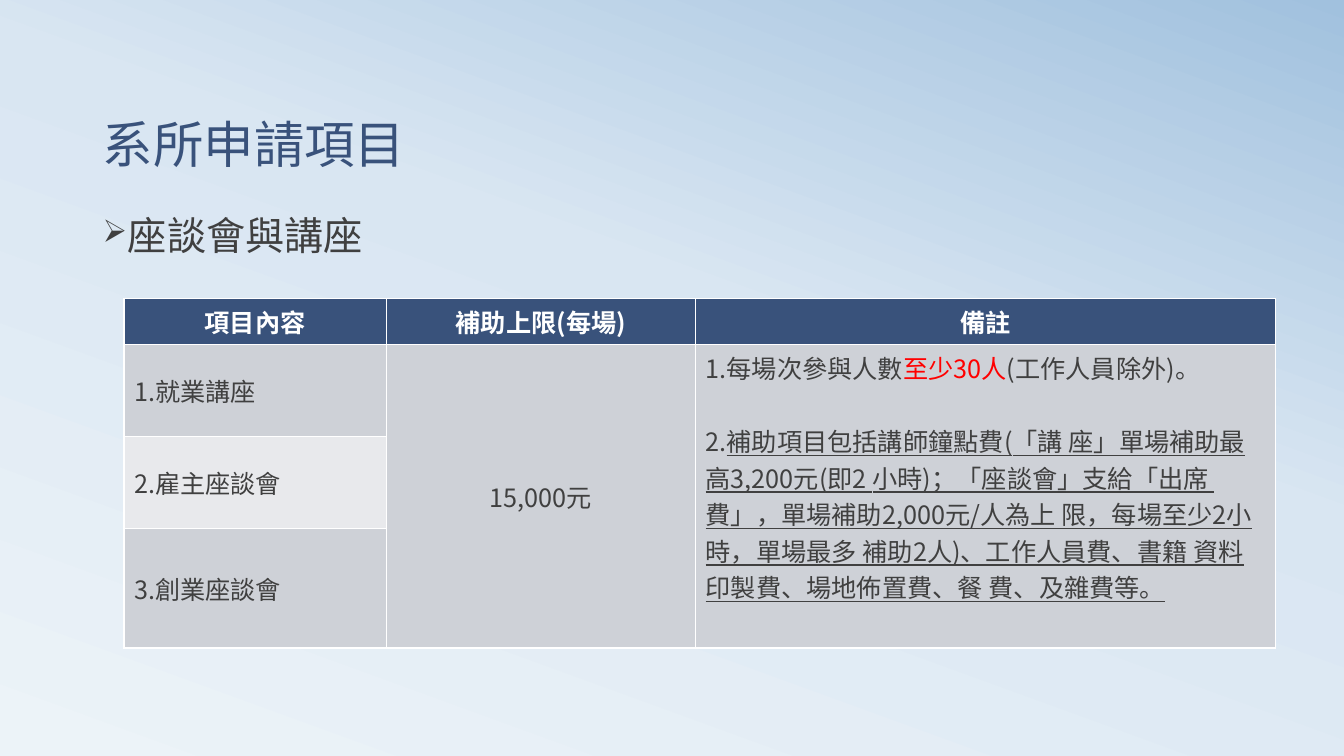
from dataclasses import dataclass

from lxml import etree
from pptx import Presentation
from pptx.dml.color import RGBColor
from pptx.enum.text import MSO_ANCHOR as Anchor, PP_ALIGN as Align
from pptx.oxml import parse_xml
from pptx.oxml.ns import nsdecls, qn
from pptx.util import Inches, Pt


@dataclass(frozen=True)
class Theme:
    font: str = "Noto Sans CJK SC"
    navy: str = "39527B"
    white: str = "FFFFFF"
    text: str = "404040"
    red: str = "FF0000"
    band_dark: str = "CED1D7"
    band_light: str = "E8E9EC"
    gradient: tuple = ((0, "ECF3F8"), (58, "D9E6F2"), (100, "A1C1DE"))
    gradient_angle: int = 290
    title_size: int = 36
    subtitle_size: int = 28
    table_size: int = 18


THEME = Theme()


@dataclass(frozen=True)
class TableCell:
    row: int
    column: int
    text: str
    fill: str
    color: str = THEME.text
    bold: bool = False
    align: Align = Align.LEFT
    anchor: Anchor = Anchor.MIDDLE
    row_span: int = 1


def add_text(paragraph, text: str, *, size: int, color: str = THEME.text,
             bold: bool = False, underline: bool = False) -> None:
    run = paragraph.add_run()
    run.text = text
    font = run.font
    font.name = THEME.font
    font.size = Pt(size)
    font.bold = bold
    font.underline = underline
    font.color.rgb = RGBColor.from_string(color)
    east_asian = etree.SubElement(font._element, qn("a:ea"))
    east_asian.set("typeface", THEME.font)


def set_background(slide) -> None:
    stops = "".join(
        f'<a:gs pos="{position * 1000}"><a:srgbClr val="{color}"/></a:gs>'
        for position, color in THEME.gradient)
    background = parse_xml(
        f'<p:bg {nsdecls("p", "a")}><p:bgPr><a:gradFill rotWithShape="1">'
        f'<a:gsLst>{stops}</a:gsLst>'
        f'<a:lin ang="{THEME.gradient_angle * 60000}" scaled="0"/>'
        '</a:gradFill><a:effectLst/></p:bgPr></p:bg>')
    slide._element.cSld.insert(0, background)


def set_bullet(paragraph, character: str, indent: float) -> None:
    properties = paragraph._p.get_or_add_pPr()
    properties.set("marL", str(Inches(indent)))
    properties.set("indent", str(-Inches(indent)))
    color = etree.SubElement(properties, qn("a:buClr"))
    etree.SubElement(color, qn("a:srgbClr")).set("val", THEME.text)
    etree.SubElement(properties, qn("a:buSzPct")).set("val", "80000")
    etree.SubElement(properties, qn("a:buChar")).set("char", character)


def add_title(slide, text: str) -> None:
    title = slide.shapes.title
    title.left, title.top = Inches(0.92), Inches(0.6)
    title.width, title.height = Inches(12), Inches(1.17)
    frame = title.text_frame
    frame.vertical_anchor = Anchor.BOTTOM
    paragraph = frame.paragraphs[0]
    paragraph.alignment = Align.LEFT
    paragraph.line_spacing = 0.8
    add_text(paragraph, text, size=THEME.title_size, color=THEME.navy)


def add_subtitle(slide, text: str) -> None:
    box = slide.shapes.add_textbox(
        Inches(0.92), Inches(2.1), Inches(11.25), Inches(0.7))
    box.text_frame.word_wrap = True
    paragraph = box.text_frame.paragraphs[0]
    paragraph.line_spacing = 0.9
    set_bullet(paragraph, "➢", 0.25)
    add_text(paragraph, text, size=THEME.subtitle_size)


def fill_cell(table, item: TableCell) -> None:
    cell = table.cell(item.row, item.column)
    if item.row_span > 1:
        cell.merge(table.cell(item.row + item.row_span - 1, item.column))
    cell.fill.solid()
    cell.fill.fore_color.rgb = RGBColor.from_string(item.fill)
    cell.vertical_anchor = item.anchor
    paragraph = cell.text_frame.paragraphs[0]
    paragraph.alignment = item.align
    if item.text:
        add_text(paragraph, item.text, size=THEME.table_size,
                 color=item.color, bold=item.bold)


def add_remarks(cell) -> None:
    attendance = cell.text_frame.paragraphs[0]
    size = THEME.table_size
    add_text(attendance, "1.每場次參與人數", size=size)
    add_text(attendance, "至少30人", size=size, color=THEME.red)
    add_text(attendance, "(工作人員除外)。", size=size)
    expenses = cell.text_frame.add_paragraph()
    expenses.space_before = Pt(26)
    add_text(expenses, "2.", size=size)
    add_text(
        expenses,
        "補助項目包括講師鐘點費(「講 座」單場補助最高3,200元(即2 小時)；"
        "「座談會」支給「出席  費」，單場補助2,000元/人為上 限，"
        "每場至少2小時，單場最多 補助2人)、工作人員費、書籍 資料印製費、"
        "場地佈置費、餐 費、及雜費等。",
        size=size, underline=True)


def add_subsidy_table(slide) -> None:
    widths = (2.6, 3.07, 5.75)
    heights = (0.46, 0.91, 0.91, 1.19)
    table = slide.shapes.add_table(
        len(heights), len(widths), Inches(1.23), Inches(2.96),
        Inches(sum(widths)), Inches(sum(heights))).table
    for column, width in zip(table.columns, widths):
        column.width = Inches(width)
    for row, height in zip(table.rows, heights):
        row.height = Inches(height)

    # Header, then the items, then the two merged columns
    headers = ("項目內容", "補助上限(每場)", "備註")
    items = ("1.就業講座", "2.雇主座談會", "3.創業座談會")
    cells = [
        TableCell(0, column, text, THEME.navy, THEME.white, bold=True,
                  align=Align.CENTER, anchor=Anchor.TOP)
        for column, text in enumerate(headers)]
    cells += [
        TableCell(row, 0, text,
                  THEME.band_dark if row % 2 else THEME.band_light)
        for row, text in enumerate(items, start=1)]
    cells += [
        TableCell(1, 1, "15,000元", THEME.band_dark, align=Align.CENTER,
                  row_span=len(items)),
        TableCell(1, 2, "", THEME.band_dark, anchor=Anchor.TOP,
                  row_span=len(items))]
    for item in cells:
        fill_cell(table, item)
    add_remarks(table.cell(1, 2))


def main() -> None:
    presentation = Presentation()
    presentation.slide_width = Inches(13.33)
    presentation.slide_height = Inches(7.5)
    title_only = presentation.slide_layouts[5]
    slide = presentation.slides.add_slide(title_only)
    set_background(slide)
    add_title(slide, "系所申請項目")
    add_subtitle(slide, "座談會與講座")
    add_subsidy_table(slide)
    presentation.save("out.pptx")


if __name__ == "__main__":
    main()
